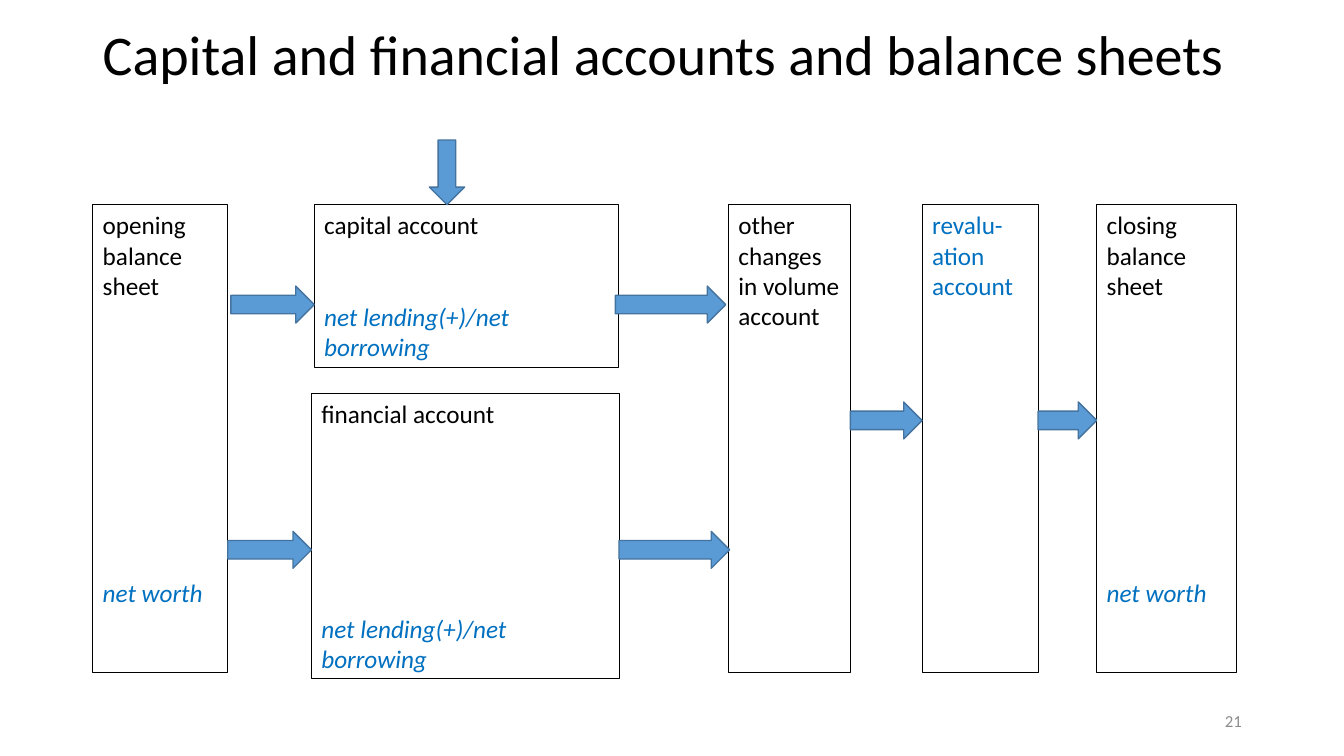
from dataclasses import dataclass

from pptx import Presentation
from pptx.dml.color import RGBColor
from pptx.enum.shapes import MSO_SHAPE
from pptx.enum.text import MSO_ANCHOR, PP_ALIGN
from pptx.util import Cm, Pt


@dataclass(frozen=True)
class Theme:
    font: str = "Calibri"
    ink: RGBColor = RGBColor(0x00, 0x00, 0x00)
    accent: RGBColor = RGBColor(0x00, 0x70, 0xC0)
    muted: RGBColor = RGBColor(0x8C, 0x8C, 0x8C)
    arrow_fill: RGBColor = RGBColor(0x5B, 0x9B, 0xD5)
    arrow_line: RGBColor = RGBColor(0x43, 0x73, 0x9E)
    title_size: Pt = Pt(40)
    body_size: Pt = Pt(18)
    number_size: Pt = Pt(12)
    frame_width: Pt = Pt(0.5)
    arrow_width: Pt = Pt(1)


THEME = Theme()
TITLE_BOX = (2.34, 0.28, 29.21, 2.31)
NUMBER_BOX = (23.93, 17.65, 7.62, 1.02)
DIAGRAM_BOX = (2.34, 3.53, 29.21, 13.57)
ACCOUNTS_TOP = 1.63
COLUMN_HEIGHT = 11.79
ARROW_HEIGHT = 0.93
BALANCE_LINE = "net worth"
LENDING_LINE = "net lending(+)/net borrowing"

ACCOUNTS = {
    "opening": (0, ACCOUNTS_TOP, 3.4, COLUMN_HEIGHT),
    "capital": (5.58, ACCOUNTS_TOP, 7.67, 4.11),
    "financial": (5.51, 6.38, 7.75, 7.19),
    "volume": (16.02, ACCOUNTS_TOP, 3.07, COLUMN_HEIGHT),
    "revaluation": (20.9, ACCOUNTS_TOP, 2.92, COLUMN_HEIGHT),
    "closing": (25.3, ACCOUNTS_TOP, 3.51, COLUMN_HEIGHT),
}
WORDING = {
    "opening": (["opening balance sheet"], BALANCE_LINE, 198),
    "capital": (["capital account"], LENDING_LINE, 44),
    "financial": (["financial account"], LENDING_LINE, 132),
    "volume": (["other changes in volume", "account"], None, 0),
    "revaluation": (["revalu-ation", "account"], None, 0),
    "closing": (["closing balance sheet"], BALANCE_LINE, 198),
}
FLOWS = [
    ("opening", "capital", 3.68, 0.08, 0),
    ("opening", "financial", 9.86, 0, 0),
    ("capital", "volume", 3.68, -0.08, -0.07),
    ("financial", "volume", 9.86, 0, 0.03),
    ("volume", "revaluation", 6.6, 0, 0),
    ("revaluation", "closing", 6.6, 0, 0),
]


def apply(target, values):
    for name, value in values.items():
        setattr(target, name, value)


def write(paragraph, wording, size, color, italic=False):
    run = paragraph.add_run()
    run.text = wording
    apply(run.font, {"name": THEME.font, "size": size, "italic": italic})
    run.font.color.rgb = color


def add_line(slide, box, wording, size, color, layout):
    frame = slide.shapes.add_textbox(*map(Cm, box)).text_frame
    apply(frame, {"word_wrap": True, "vertical_anchor": MSO_ANCHOR.MIDDLE})
    apply(frame.paragraphs[0], layout)
    write(frame.paragraphs[0], wording, size, color)


def add_account(slide, box, headings, closing_line, gap, color):
    account = slide.shapes.add_shape(MSO_SHAPE.RECTANGLE, *map(Cm, box))
    account.shadow.inherit = False
    account.fill.background()
    account.line.color.rgb = THEME.ink
    account.line.width = THEME.frame_width
    frame = account.text_frame
    apply(frame, {"word_wrap": True, "vertical_anchor": MSO_ANCHOR.TOP})
    for position, heading in enumerate(headings):
        paragraph = frame.add_paragraph() if position else frame.paragraphs[0]
        paragraph.alignment = PP_ALIGN.LEFT
        write(paragraph, heading, THEME.body_size, color)
    if closing_line:
        paragraph = frame.add_paragraph()
        apply(paragraph, {"alignment": PP_ALIGN.LEFT, "space_before": Pt(gap)})
        write(paragraph, closing_line, THEME.body_size, THEME.accent, True)


def add_arrow(slide, preset, box):
    arrow = slide.shapes.add_shape(preset, *map(Cm, box))
    arrow.shadow.inherit = False
    arrow.fill.solid()
    arrow.fill.fore_color.rgb = THEME.arrow_fill
    arrow.line.color.rgb = THEME.arrow_line
    arrow.line.width = THEME.arrow_width


def add_diagram(slide, box):
    left, top = box[:2]
    for account, (x, y, width, height) in ACCOUNTS.items():
        color = THEME.accent if account == "revaluation" else THEME.ink
        place = (left + x, top + y, width, height)
        add_account(slide, place, *WORDING[account], color)
    add_arrow(slide, MSO_SHAPE.DOWN_ARROW, (left + 8.48, top, 0.89, ACCOUNTS_TOP))
    for source, target, y, start_shift, end_shift in FLOWS:
        start = ACCOUNTS[source][0] + ACCOUNTS[source][2] + start_shift
        end = ACCOUNTS[target][0] + end_shift
        place = (left + start, top + y, end - start, ARROW_HEIGHT)
        add_arrow(slide, MSO_SHAPE.RIGHT_ARROW, place)


def main():
    deck = Presentation()
    apply(deck, {"slide_width": Cm(33.87), "slide_height": Cm(19.05)})
    slide = deck.slides.add_slide(deck.slide_layouts[6])
    add_line(slide, TITLE_BOX, "Capital and financial accounts and balance sheets",
             THEME.title_size, THEME.ink,
             {"alignment": PP_ALIGN.LEFT, "line_spacing": 0.9})
    add_diagram(slide, DIAGRAM_BOX)
    add_line(slide, NUMBER_BOX, "21", THEME.number_size, THEME.muted,
             {"alignment": PP_ALIGN.RIGHT})
    deck.save("out.pptx")


if __name__ == "__main__":
    main()
